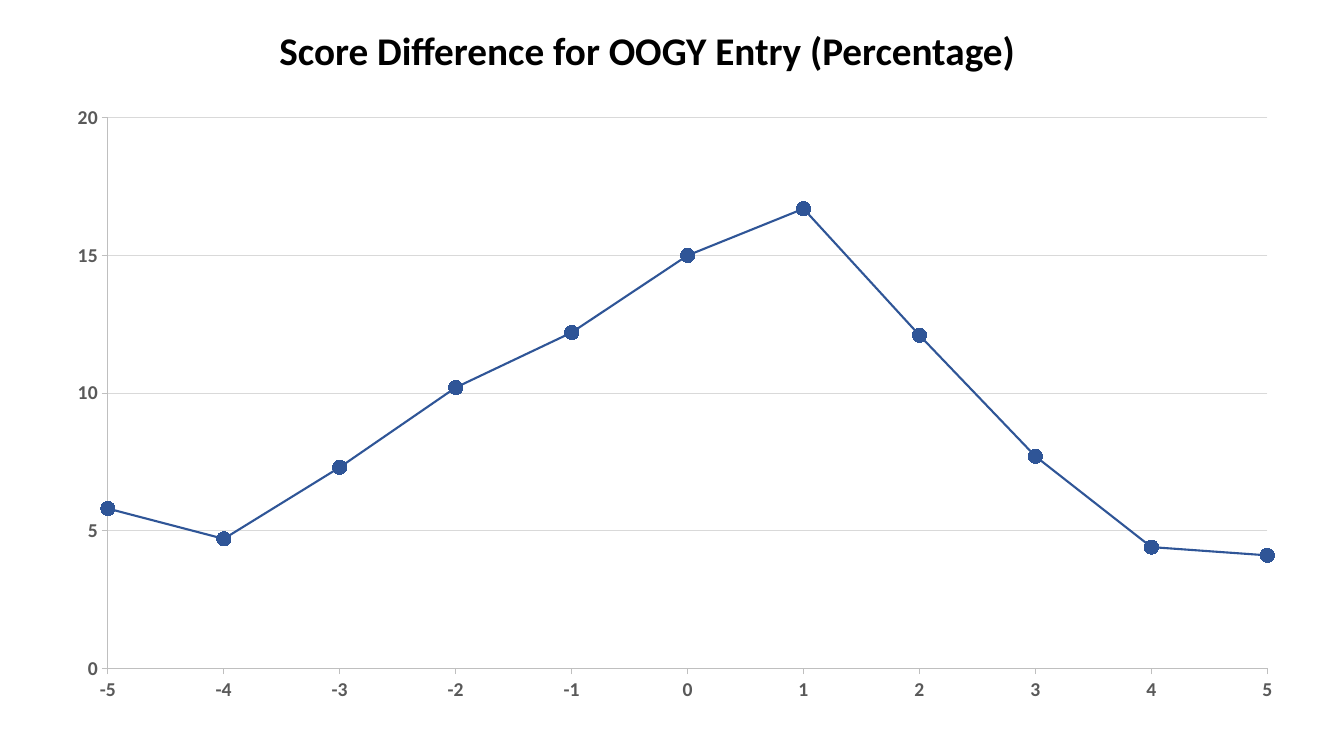
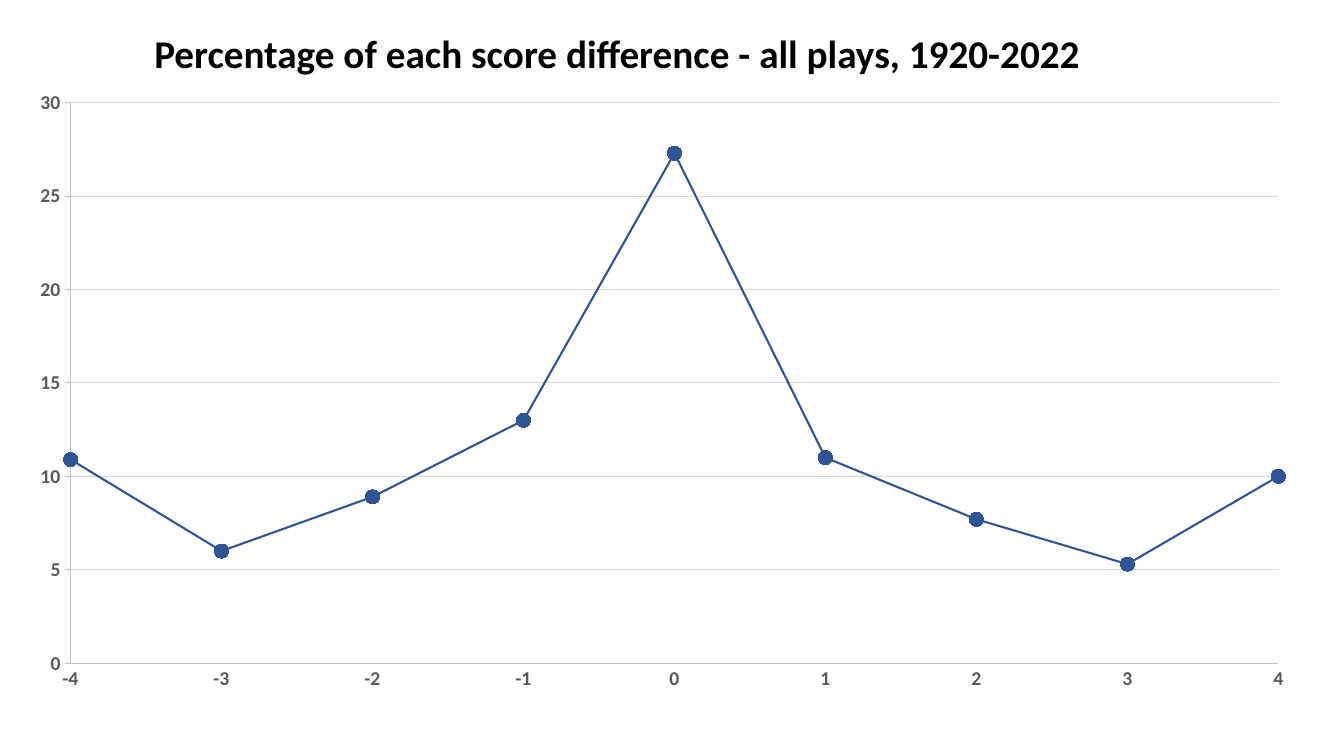
from lxml.etree import SubElement as Sub
from pptx import Presentation
from pptx.chart.data import XyChartData as Data
from pptx.dml.color import RGBColor as Rgb
from pptx.enum.chart import XL_AXIS_CROSSES as Cross
from pptx.enum.chart import XL_CHART_TYPE as Kind
from pptx.enum.chart import XL_MARKER_STYLE as Mark
from pptx.enum.chart import XL_TICK_MARK as Tick
from pptx.enum.text import MSO_ANCHOR as Anchor
from pptx.enum.text import MSO_AUTO_SIZE as Fit
from pptx.enum.text import PP_ALIGN as Align
from pptx.oxml.ns import qn
from pptx.util import Pt

PX = 9144
HUES = {"text": "000000", "label": "595959", "axis": "BFBFBF", "grid": "D9D9D9", "data": "2F5597"}
FRAME = {"word_wrap": True, "auto_size": Fit.NONE, "vertical_anchor": Anchor.TOP}


def put(obj, vals):
    for name, val in vals.items():
        setattr(obj, name, val)


def scale(box):
    return [n * PX for n in box]


class Deck:
    face = "Calibri"

    def __init__(self):
        self.prs = Presentation()
        put(self.prs, {"slide_width": 1333 * PX, "slide_height": 750 * PX})

    def page(self):
        self.slide = self.prs.slides.add_slide(self.prs.slide_layouts[5])

    def font(self, font, size, hue, bold=True):
        put(font, {"name": self.face, "size": Pt(size), "bold": bold})
        font.color.rgb = Rgb.from_string(HUES[hue])

    def line(self, line, hue, width):
        line.color.rgb = Rgb.from_string(HUES[hue])
        line.width = Pt(width)

    def title(self, text, box):
        shape = self.slide.shapes.title
        put(shape, dict(zip(("left", "top", "width", "height"), scale(box))))
        put(shape.text_frame, FRAME)
        para = shape.text_frame.paragraphs[0]
        para.alignment = Align.LEFT
        run = para.add_run()
        run.text = text
        self.font(run.font, 28, "text")

    def axis(self, axis, low, high, step, tick, grid):
        put(axis, {
            "minimum_scale": low, "maximum_scale": high, "major_unit": step,
            "major_tick_mark": tick, "minor_tick_mark": Tick.NONE,
            "has_major_gridlines": grid, "has_minor_gridlines": False,
            "has_title": False, "crosses": Cross.MINIMUM,
        })
        self.font(axis.tick_labels.font, 14, "label")
        self.line(axis.format.line, "axis", 0.75)
        if grid:
            self.line(axis.major_gridlines.format.line, "grid", 0.75)

    def inset(self, chart, box, plot):
        area = chart._chartSpace.chart.plotArea
        for old in area.findall(qn("c:layout")):
            area.remove(old)
        layout = Sub(area, qn("c:layout"))
        area.insert(0, layout)
        manual = Sub(layout, qn("c:manualLayout"))
        left, top, width, height = box
        x, y, w, h = plot
        parts = {
            "layoutTarget": "inner", "xMode": "edge", "yMode": "edge",
            "x": (x - left) / width, "y": (y - top) / height,
            "w": w / width, "h": h / height,
        }
        for name, val in parts.items():
            Sub(manual, qn(f"c:{name}")).set("val", str(val))

    def chart(self, box, plot, start, vals, top, tick):
        data = Data()
        points = data.add_series("Series 1")
        for x, y in enumerate(vals, start):
            points.add_data_point(x, y)
        chart = self.slide.shapes.add_chart(Kind.XY_SCATTER_LINES, *scale(box), data).chart
        put(chart, {"has_title": False, "has_legend": False})
        self.font(chart.font, 10, "text", False)
        chart.plots[0].vary_by_categories = False
        self.axis(chart.category_axis, start, -start, 1, tick, False)
        self.axis(chart.value_axis, 0, top, 5, Tick.OUTSIDE, True)
        series = chart.plots[0].series[0]
        series.smooth = False
        self.line(series.format.line, "data", 1.5)
        put(series.marker, {"style": Mark.CIRCLE, "size": 10})
        style = series.marker.format
        style.fill.solid()
        style.fill.fore_color.rgb = Rgb.from_string(HUES["data"])
        self.line(style.line, "data", 0.75)
        self.inset(chart, box, plot)


def main():
    deck = Deck()
    deck.page()
    deck.chart((53, 93, 1235, 616), (107, 117, 1150, 546), -5,
               (5.8, 4.7, 7.3, 10.2, 12.2, 15, 16.7, 12.1, 7.7, 4.4, 4.1), 20, Tick.OUTSIDE)
    deck.title("Score Difference for OOGY Entry (Percentage)", (267, 21, 844, 57))
    deck.page()
    deck.chart((15, 78, 1285, 621), (70, 102, 1198, 556), -4,
               (10.9, 6, 8.9, 13, 27.3, 11, 7.7, 5.3, 10), 30, Tick.NONE)
    deck.title("Percentage of each score difference - all plays, 1920-2022", (143, 24, 1057, 57))
    deck.prs.save("out.pptx")


if __name__ == "__main__":
    main()
